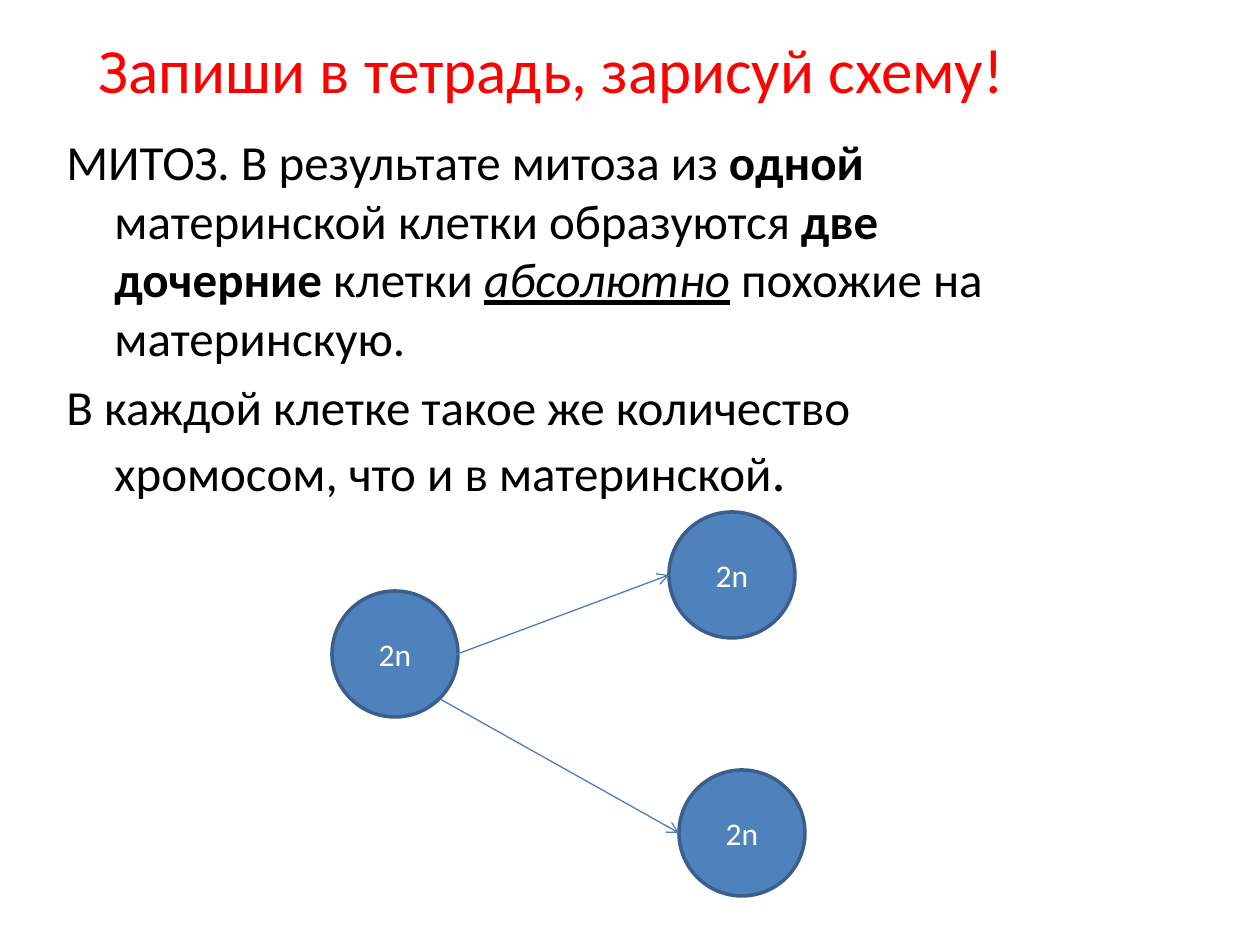
import pptx
import pptx.util
import pptx.dml.color
import pptx.enum.shapes
import pptx.enum.text
import pptx.oxml.ns
import lxml.etree

PX = 914400 // 126
SIZE = (1260, 945)
DIAMETER = 126
INDENT = 48

TITLE_BOX = (59, 0, 1017, 125)
TITLE = [
    ("Запиши в тетрадь, зарисуй схему! ", {"size": 36, "color": "FF0000"}),
    (" ", {"size": 44}),
]
BODY_BOX = (54, 125, 1029, 714)
BODY = [
    [
        ("МИТОЗ. В результате митоза из ", {}),
        ("одной", {"bold": True}),
        (" материнской клетки образуются ", {}),
        ("две дочерние ", {"bold": True}),
        ("клетки ", {}),
        ("абсолютно", {"italic": True, "underline": True}),
        (" похожие на материнскую.", {}),
    ],
    [
        ("В каждой клетке такое же количество хромосом, что и в материнской", {}),
        (".", {"size": 32}),
    ],
]
CELL_LABEL = "2n"
CELLS = [(332, 591), (669, 512), (679, 770)]
ARROWS = [((444, 659), (669, 575)), ((440, 699), (679, 833))]


def px(*values):
    return [pptx.util.Emu(v * PX) for v in values]


def rgb(value):
    return pptx.dml.color.RGBColor.from_string(value)


def add_runs(p, runs, **defaults):
    for text, changes in runs:
        r = p.add_run()
        r.text = text
        values = {"name": "Calibri", "color": "000000", **defaults, **changes}
        r.font.color.rgb = rgb(values.pop("color"))
        values["size"] = pptx.util.Pt(values["size"])
        for name, value in values.items():
            setattr(r.font, name, value)


def center(tf):
    tf.vertical_anchor = pptx.enum.text.MSO_ANCHOR.MIDDLE
    tf.paragraphs[0].alignment = pptx.enum.text.PP_ALIGN.CENTER
    return tf.paragraphs[0]


def add_text_box(s, box):
    tf = s.shapes.add_textbox(*px(*box)).text_frame
    tf.word_wrap = True
    return tf


def add_body(s):
    tf = add_text_box(s, BODY_BOX)
    for i, runs in enumerate(BODY):
        p = tf.add_paragraph() if i else tf.paragraphs[0]
        p.space_before = pptx.util.Pt(5.6)
        pPr = p._p.get_or_add_pPr()
        pPr.set("marL", str(INDENT * PX))
        pPr.set("indent", str(-INDENT * PX))
        add_runs(p, runs, size=28)


def add_cell(s, left, top):
    sp = s.shapes.add_shape(
        pptx.enum.shapes.MSO_SHAPE.OVAL, *px(left, top, DIAMETER, DIAMETER))
    sp.shadow.inherit = False
    sp.fill.solid()
    sp.fill.fore_color.rgb = rgb("4F81BD")
    sp.line.color.rgb = rgb("3A5F8C")
    sp.line.width = pptx.util.Pt(2)
    add_runs(center(sp.text_frame), [(CELL_LABEL, {})], size=18, color="FFFFFF")


def add_arrow(s, start, end):
    line = s.shapes.add_connector(
        pptx.enum.shapes.MSO_CONNECTOR.STRAIGHT, *px(*start, *end))
    line.line.color.rgb = rgb("4B7EBC")
    line.line.width = pptx.util.Pt(0.75)
    qn = pptx.oxml.ns.qn
    lxml.etree.SubElement(line.line._get_or_add_ln(), qn("a:tailEnd"), type="arrow")
    lxml.etree.SubElement(line._element.spPr, qn("a:effectLst"))


def main():
    prs = pptx.Presentation()
    prs.slide_width, prs.slide_height = px(*SIZE)
    s = prs.slides.add_slide(prs.slide_layouts[6])
    add_runs(center(add_text_box(s, TITLE_BOX)), TITLE)
    add_body(s)
    for cell in CELLS:
        add_cell(s, *cell)
    for arrow in ARROWS:
        add_arrow(s, *arrow)
    prs.save("out.pptx")


if __name__ == "__main__":
    main()
